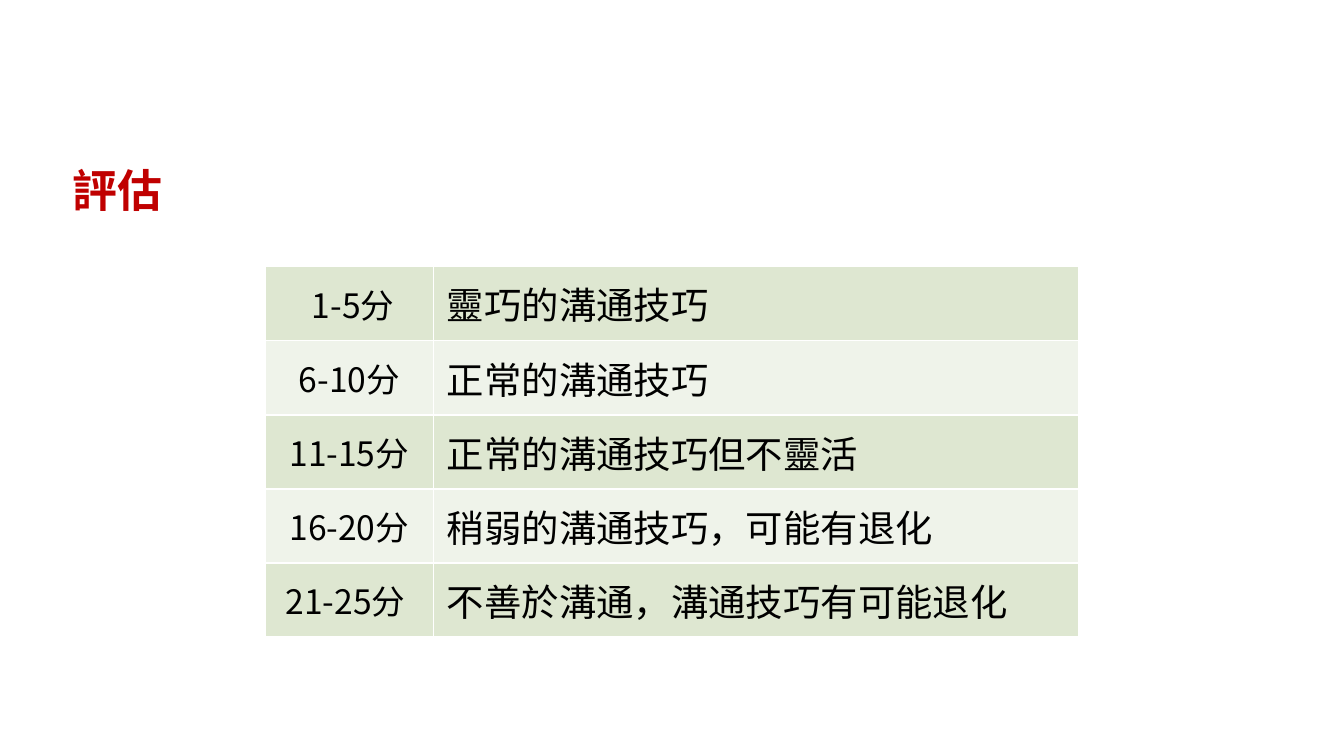
from lxml import etree
from pptx import Presentation
from pptx.dml.color import RGBColor
from pptx.enum.text import MSO_ANCHOR, PP_ALIGN
from pptx.oxml import parse_xml
from pptx.oxml.ns import nsdecls, qn
from pptx.util import Pt

MIDDLE = MSO_ANCHOR.MIDDLE
LEFT, CENTER = PP_ALIGN.LEFT, PP_ALIGN.CENTER

FONT = "Noto Sans CJK SC"
BLACK = RGBColor(0x00, 0x00, 0x00)
RED = RGBColor(0xC0, 0x00, 0x00)
BANDS = RGBColor(0xDE, 0xE7, 0xD1), RGBColor(0xEF, 0xF3, 0xEA)

TITLE = "評估"
SCORES = [
    (" 1-5分", "靈巧的溝通技巧"),
    ("6-10分", "正常的溝通技巧"),
    ("11-15分", "正常的溝通技巧但不靈活"),
    ("16-20分", "稍弱的溝通技巧，可能有退化"),
    ("21-25分 ", "不善於溝通，溝通技巧有可能退化"),
]
# Width, text size and alignment of each column
COLUMNS = [(Pt(90), Pt(18), CENTER), (Pt(345.6), Pt(20), LEFT)]
ROW_HEIGHT = Pt(39.7)


def write(frame, text, size, color, align=LEFT, bold=False):
    para = frame.paragraphs[0]
    para.text = text
    para.alignment = align
    font = para.font
    font.size, font.bold, font.name = size, bold, FONT
    font.color.rgb = color
    properties = para._p.pPr.find(qn("a:defRPr"))
    etree.SubElement(properties, qn("a:ea"), typeface=FONT)


def add_white_borders(cell):
    properties = cell._tc.get_or_add_tcPr()
    for side in "LRTB":
        properties.append(parse_xml(
            f'<a:ln{side} {nsdecls("a")} w="12700"><a:solidFill>'
            f'<a:srgbClr val="FFFFFF"/></a:solidFill></a:ln{side}>'))


def add_title(page):
    box = page.shapes.add_textbox(Pt(31.7), Pt(83.5), Pt(600.5), Pt(36))
    frame = box.text_frame
    frame.word_wrap = True
    frame.vertical_anchor = MIDDLE
    write(frame, TITLE, Pt(24), RED, bold=True)


def add_score_table(page):
    width = sum(column[0] for column in COLUMNS)
    table = page.shapes.add_table(
        len(SCORES), len(COLUMNS), Pt(142.2), Pt(142.8),
        width, ROW_HEIGHT * len(SCORES)).table
    table.first_row = False
    for column, (column_width, _, _) in zip(table.columns, COLUMNS):
        column.width = column_width
    for r, texts in enumerate(SCORES):
        table.rows[r].height = ROW_HEIGHT
        for c, (text, (_, size, align)) in enumerate(zip(texts, COLUMNS)):
            cell = table.cell(r, c)
            cell.vertical_anchor = MIDDLE
            add_white_borders(cell)
            cell.fill.solid()
            cell.fill.fore_color.rgb = BANDS[r % 2]
            write(cell.text_frame, text, size, BLACK, align)


def main():
    deck = Presentation()
    deck.slide_width, deck.slide_height = Pt(720), Pt(405)
    page = deck.slides.add_slide(deck.slide_layouts[6])
    add_score_table(page)
    add_title(page)
    deck.save("out.pptx")


if __name__ == "__main__":
    main()
